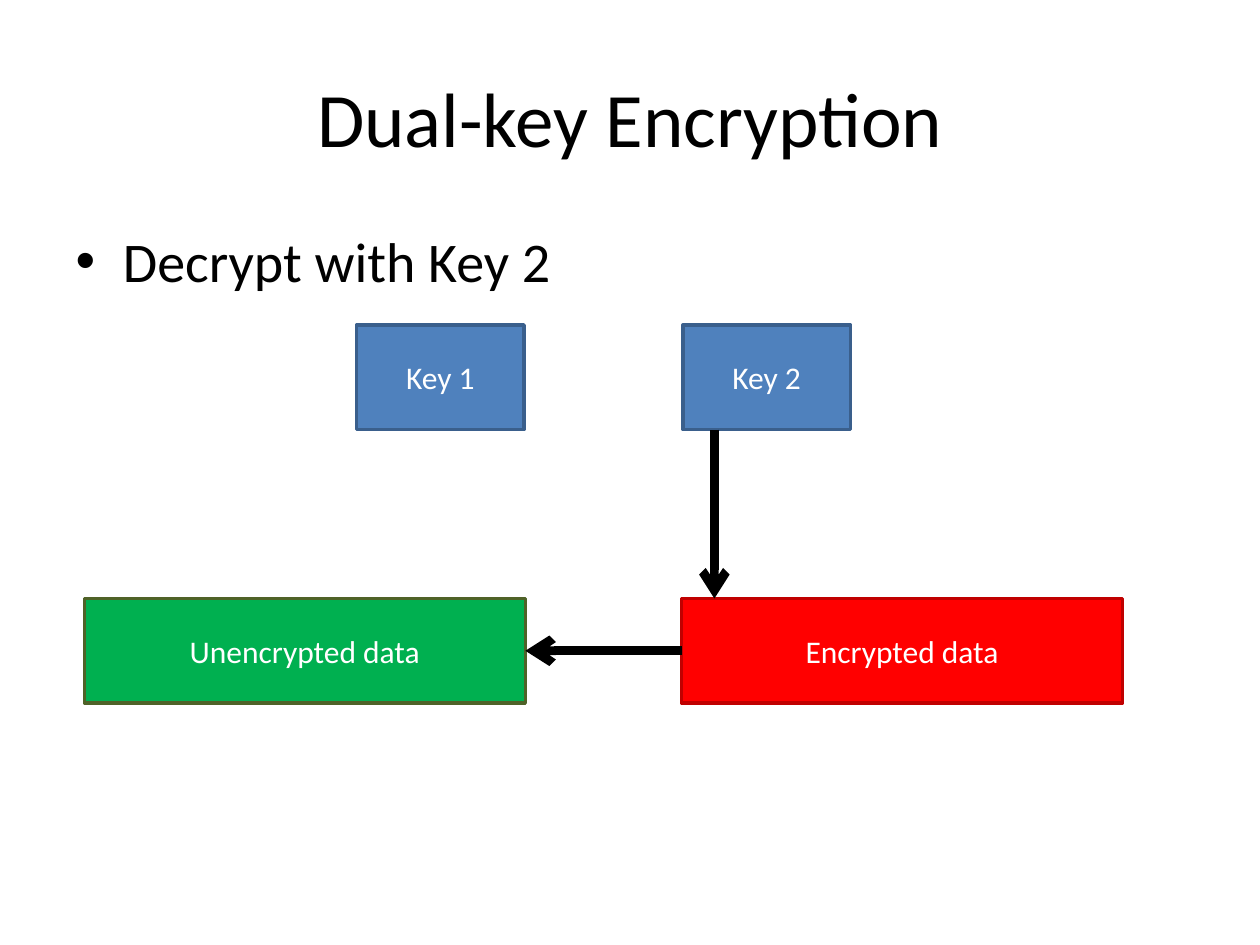
from dataclasses import dataclass

from lxml import etree
from pptx import Presentation
from pptx.dml.color import RGBColor
from pptx.enum.shapes import MSO_CONNECTOR, MSO_SHAPE
from pptx.enum.text import MSO_ANCHOR, PP_ALIGN
from pptx.oxml.ns import qn
from pptx.util import Inches, Pt

RECTANGLE = MSO_SHAPE.RECTANGLE
STRAIGHT = MSO_CONNECTOR.STRAIGHT
MIDDLE = MSO_ANCHOR.MIDDLE
CENTER = PP_ALIGN.CENTER
LEFT_SIDE, RIGHT_SIDE = 1, 3
FONT = "Calibri"
BLACK, WHITE = "000000", "FFFFFF"
KEY_FILL, KEY_LINE = "4F81BD", "3A5F8C"
KEY_TOP, DATA_TOP = 2.58, 4.75
KEY_WIDTH, DATA_WIDTH, BOX_HEIGHT = 1.33, 3.5, 0.83
KEY_ARROW_X = 5.67


@dataclass
class Box:
    text: str
    left: float
    top: float
    width: float
    fill: str
    line: str


BOXES = [
    Box("Key 1", 2.83, KEY_TOP, KEY_WIDTH, KEY_FILL, KEY_LINE),
    Box("Key 2", 5.42, KEY_TOP, KEY_WIDTH, KEY_FILL, KEY_LINE),
    Box("Unencrypted data", 0.67, DATA_TOP, DATA_WIDTH, "00B050", "4F6228"),
    Box("Encrypted data", 5.41, DATA_TOP, DATA_WIDTH, "FF0000", "C00000"),
]


def color(value: str) -> RGBColor:
    return RGBColor.from_string(value)


def write_text(shape, text: str, size: int, text_color: str):
    """Fill the shape with one formatted paragraph and return that paragraph."""
    shape.text_frame.text = text
    paragraph = shape.text_frame.paragraphs[0]
    font = paragraph.runs[0].font
    for name, value in {"name": FONT, "size": Pt(size)}.items():
        setattr(font, name, value)
    font.color.rgb = color(text_color)
    return paragraph


def place(shape, left: float, top: float, width: float, height: float) -> None:
    position = {"left": left, "top": top, "width": width, "height": height}
    for name, value in position.items():
        setattr(shape, name, Inches(value))


def draw_box(slide, box: Box):
    shape = slide.shapes.add_shape(
        RECTANGLE, Inches(box.left), Inches(box.top), Inches(box.width), Inches(BOX_HEIGHT)
    )
    shape.shadow.inherit = False
    shape.fill.solid()
    shape.fill.fore_color.rgb = color(box.fill)
    shape.line.color.rgb = color(box.line)
    shape.line.width = Pt(2)
    shape.text_frame.vertical_anchor = MIDDLE
    write_text(shape, box.text, 18, WHITE).alignment = CENTER
    return shape


def draw_arrow(slide, start: tuple[float, float], end: tuple[float, float]):
    points = [Inches(value) for value in (*start, *end)]
    connector = slide.shapes.add_connector(STRAIGHT, *points)
    connector.line.color.rgb = color(BLACK)
    connector.line.width = Pt(5)
    etree.SubElement(connector.line._get_or_add_ln(), qn("a:tailEnd"), type="arrow")
    etree.SubElement(connector._element.spPr, qn("a:effectLst"))
    return connector


def main() -> None:
    presentation = Presentation()
    presentation.slide_width, presentation.slide_height = Inches(10), Inches(7.5)
    slide = presentation.slides.add_slide(presentation.slide_layouts[1])

    title, body = slide.shapes.title, slide.placeholders[1]
    place(title, 0.5, 0.3, 9, 1.25)
    title.text_frame.vertical_anchor = MIDDLE
    write_text(title, "Dual-key Encryption", 44, BLACK).alignment = CENTER
    place(body, 0.5, 1.75, 9, 4.95)
    write_text(body, "Decrypt with Key 2", 32, BLACK)

    shapes = {box.text: draw_box(slide, box) for box in BOXES}

    data_middle = DATA_TOP + BOX_HEIGHT / 2
    decrypt_arrow = draw_arrow(slide, (5.41, data_middle), (4.17, data_middle))
    decrypt_arrow.begin_connect(shapes["Encrypted data"], LEFT_SIDE)
    decrypt_arrow.end_connect(shapes["Unencrypted data"], RIGHT_SIDE)
    draw_arrow(slide, (KEY_ARROW_X, KEY_TOP + BOX_HEIGHT), (KEY_ARROW_X, DATA_TOP))

    presentation.save("out.pptx")


if __name__ == "__main__":
    main()
